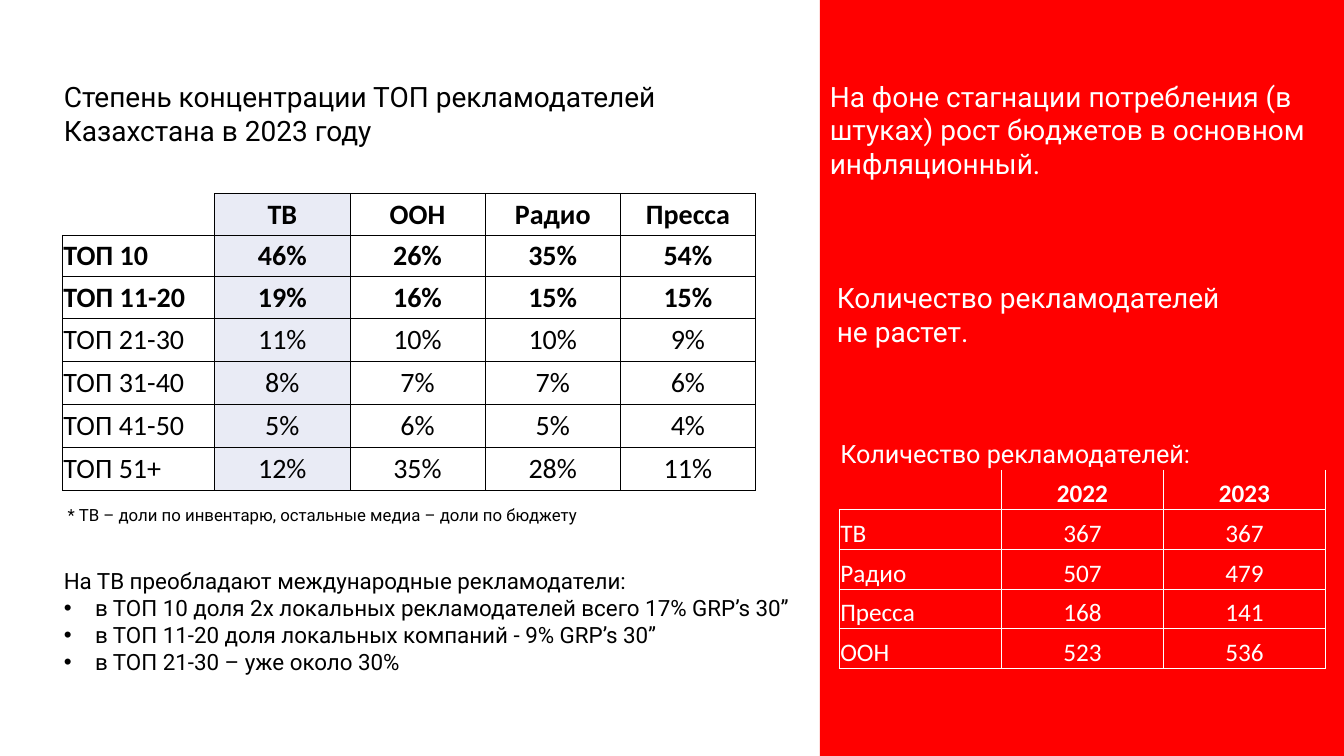
from lxml import etree
from pptx import Presentation
from pptx.dml.color import RGBColor
from pptx.enum.shapes import MSO_SHAPE
from pptx.enum.text import MSO_ANCHOR, MSO_AUTO_SIZE, PP_ALIGN
from pptx.oxml.ns import qn
from pptx.util import Inches, Pt

RECT = MSO_SHAPE.RECTANGLE
TOP, MID, LOW = MSO_ANCHOR.TOP, MSO_ANCHOR.MIDDLE, MSO_ANCHOR.BOTTOM
FIXED = MSO_AUTO_SIZE.NONE
LEFT, MIDDLE = PP_ALIGN.LEFT, PP_ALIGN.CENTER
BLACK, WHITE, RED, PALE = "000000", "FFFFFF", "FF0000", "E9EBF5"
ink = RGBColor.from_string

deck = Presentation()
deck.slide_width, deck.slide_height = Inches(13.33), Inches(7.5)
COL, ROW = deck.slide_width / 100, deck.slide_height / 100
slide = deck.slides.add_slide(deck.slide_layouts[1])
shapes = slide.shapes


def box(x, y, w, h):
    return int(x * COL), int(y * ROW), int(w * COL), int(h * ROW)


def write(para, text, size, color, name="Roboto", bold=False, align=LEFT, gap=0):
    para.text = text
    para.alignment = align
    para.space_before = Pt(gap)
    for key, value in {"size": Pt(size), "name": name, "bold": bold}.items():
        setattr(para.font, key, value)
    para.font.color.rgb = ink(color)


panel = shapes.add_shape(RECT, *box(61, 0, 39, 100))
panel.shadow.inherit = False
panel.fill.solid()
panel.fill.fore_color.rgb = ink(RED)
panel.line.fill.background()
frame = panel.text_frame
frame.word_wrap = True
frame.vertical_anchor = TOP
frame.margin_top = int(10.5 * ROW)
claims = [
    ("На фоне стагнации потребления (в штуках) рост бюджетов в основном инфляционный.", 0, 0),
    ("Количество рекламодателей", 72, 0.07),
    ("не растет.", 0, 0.07),
]
for n, (text, gap, inset) in enumerate(claims):
    para = frame.add_paragraph() if n else frame.paragraphs[0]
    para._p.get_or_add_pPr().set("marL", str(Inches(inset)))
    write(para, text, 20, WHITE, gap=gap)

title, body = shapes.title, slide.placeholders[1]
note = shapes.add_textbox(*box(4.3, 66.1, 50, 4))
places = [
    (title, (4, 9.87, 52.9, 10.27)),
    (body, (4, 74.4, 56.9, 15.7)),
    (note, (4.3, 66.1, 50, 4)),
]
for item, place in places:
    item.left, item.top, item.width, item.height = box(*place)
    frame = item.text_frame
    frame.word_wrap = True
    frame.auto_size = FIXED
    frame.vertical_anchor = TOP

write(title.text_frame.paragraphs[0],
      "Степень концентрации ТОП рекламодателей Казахстана в 2023 году", 20, BLACK)
write(note.text_frame.paragraphs[0],
      "* ТВ – доли по инвентарю, остальные медиа – доли по бюджету", 12, BLACK)

points = [
    "На ТВ преобладают международные рекламодатели:",
    "в ТОП 10 доля 2х локальных рекламодателей всего 17% GRP’s 30”",
    "в ТОП 11-20 доля локальных компаний - 9% GRP’s 30”",
    "в ТОП 21-30 – уже около 30%",
]
frame = body.text_frame
for n, text in enumerate(points):
    para = frame.add_paragraph() if n else frame.paragraphs[0]
    props = para._p.get_or_add_pPr()
    hang = Inches(0.31) if n else 0
    props.set("marL", str(hang))
    props.set("indent", str(-hang))
    if n:
        etree.SubElement(props, qn("a:buFont"), typeface="Arial")
        etree.SubElement(props, qn("a:buChar"), char="•")
    else:
        etree.SubElement(props, qn("a:buNone"))
    write(para, text, 16, BLACK)

shares = [
    ["", "ТВ", "ООН", "Радио", "Пресса"],
    ["ТОП 10", "46%", "26%", "35%", "54%"],
    ["ТОП 11-20", "19%", "16%", "15%", "15%"],
    ["ТОП 21-30", "11%", "10%", "10%", "9%"],
    ["ТОП 31-40", "8%", "7%", "7%", "6%"],
    ["ТОП 41-50", "5%", "6%", "5%", "4%"],
    ["ТОП 51+", "12%", "35%", "28%", "11%"],
]
counts = [
    ["Количество рекламодателей:", "", ""],
    ["", "2022", "2023"],
    ["ТВ", "367", "367"],
    ["Радио", "507", "479"],
    ["Пресса", "168", "141"],
    ["ООН", "523", "536"],
]
grids = [
    dict(data=shares, at=(4.65, 25.6), cols=[11.33] + [10.06] * 4,
         rows=[5.5] * 3 + [5.7] * 4, size=20, color=BLACK, anchor=MID,
         bold=(0, 1, 2), head=0, tint=1),
    dict(data=counts, at=(62.45, 56.9), cols=[12.06] * 3,
         rows=[5.25] * 6, size=18, color=WHITE, anchor=LOW,
         bold=(1,), head=1, tint=None),
]
for grid in grids:
    data, cols, rows, head = grid["data"], grid["cols"], grid["rows"], grid["head"]
    table = shapes.add_table(len(rows), len(cols),
                             *box(*grid["at"], sum(cols), sum(rows))).table
    table.first_row = table.horz_banding = False
    for c, wide in enumerate(cols):
        table.columns[c].width = int(wide * COL)
    for r, tall in enumerate(rows):
        table.rows[r].height = int(tall * ROW)
        for c, text in enumerate(data[r]):
            cell = table.cell(r, c)
            edge = {"margin_left": 0.01, "margin_right": 0.01,
                    "margin_top": 0.01, "margin_bottom": 0}
            for key, value in edge.items():
                setattr(cell, key, Inches(value))
            cell.vertical_anchor = grid["anchor"]
            if c == grid["tint"]:
                cell.fill.solid()
                cell.fill.fore_color.rgb = ink(PALE)
            else:
                cell.fill.background()
            write(cell.text_frame.paragraphs[0], text, grid["size"], grid["color"],
                  "Roboto" if r < head else "Calibri", r in grid["bold"],
                  MIDDLE if c else LEFT)
            if r < head:
                sides = ""
            elif r == head and c == 0:
                sides = "RB"
            elif r == head and head:
                sides = "LRB"
            else:
                sides = "LRTB"
            props = cell._tc.get_or_add_tcPr()
            for n, side in enumerate("LRTB"):
                line = etree.Element(qn("a:ln" + side), w=str(Pt(0.5)))
                if side in sides:
                    paint = etree.SubElement(line, qn("a:solidFill"))
                    etree.SubElement(paint, qn("a:srgbClr"), val=grid["color"])
                else:
                    etree.SubElement(line, qn("a:noFill"))
                props.insert(n, line)
    if head:
        table.cell(0, 0).merge(table.cell(0, len(cols) - 1))

deck.save("out.pptx")
